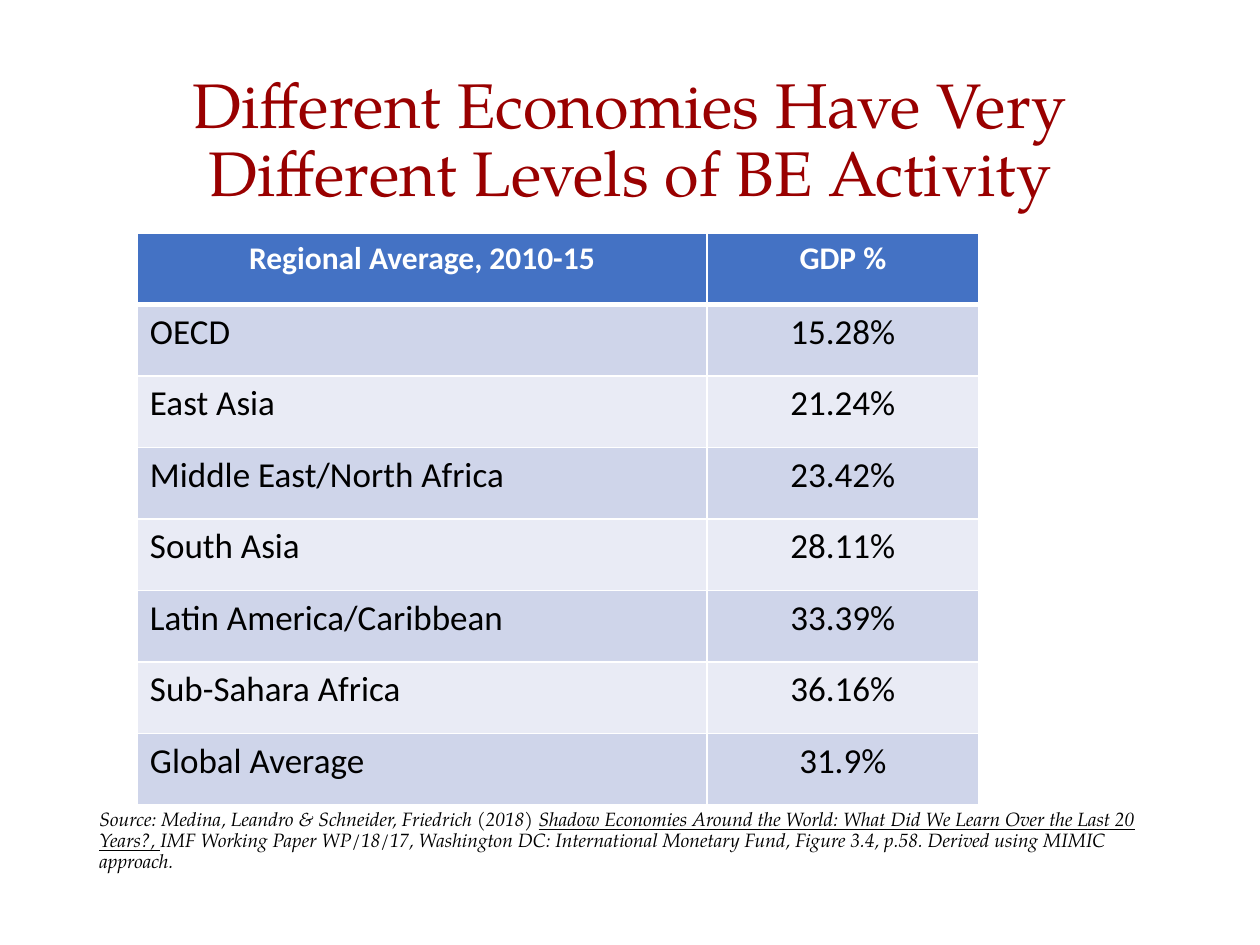
from dataclasses import dataclass

from lxml.etree import SubElement
from pptx import Presentation
from pptx.dml.color import RGBColor
from pptx.enum.text import MSO_ANCHOR, PP_ALIGN
from pptx.oxml.ns import qn
from pptx.util import Inches, Pt


@dataclass(frozen=True)
class Theme:
    """Fonts, type sizes and colours of the slide."""
    serif: str = "TeX Gyre Pagella"
    sans: str = "Calibri"
    title_size: int = 36
    header_size: int = 18
    body_size: int = 20
    source_size: int = 11
    title: str = "990000"
    text: str = "000000"
    white: str = "FFFFFF"
    header: str = "4472C4"
    bands: tuple = ("CFD5EA", "E9EBF5")


THEME = Theme()

ROWS = [
    ("Regional Average, 2010-15", "GDP %"),
    ("OECD", "15.28%"),
    ("East Asia", "21.24%"),
    ("Middle East/North Africa", "23.42%"),
    ("South Asia", "28.11%"),
    ("Latin America/Caribbean", "33.39%"),
    ("Sub-Sahara Africa", "36.16%"),
    ("Global Average", "31.9%"),
]

SOURCE = [
    ("Source: Medina, Leandro & Schneider, Friedrich (2018) ", False),
    ("Shadow Economies Around the World: What Did We Learn Over the Last 20 Years?, ", True),
    ("IMF Working Paper WP/18/17, Washington DC: International Monetary Fund, "
     "Figure 3.4, p.58. Derived using MIMIC approach.", False),
]


def set_font(para, name, size, color, bold=False, italic=False):
    """Set the font of a whole paragraph."""
    font = para.font
    font.name, font.size = name, Pt(size)
    font.bold, font.italic = bold, italic
    font.color.rgb = RGBColor.from_string(color)


def add_title(page, text):
    """Place and format the title placeholder."""
    title = page.shapes.title
    title.left, title.top = Inches(0.69), Inches(0.4)
    title.width, title.height = Inches(8.62), Inches(1.45)
    frame = title.text_frame
    frame.text = text
    frame.word_wrap = True
    frame.vertical_anchor = MSO_ANCHOR.MIDDLE
    para = frame.paragraphs[0]
    para.alignment, para.line_spacing = PP_ALIGN.CENTER, 0.9
    set_font(para, THEME.serif, THEME.title_size, THEME.title)


def set_borders(cell, widths):
    """Draw white borders, given a width in points for each side."""
    properties = cell._tc.get_or_add_tcPr()
    for side, width in widths.items():
        line = SubElement(properties, qn(f"a:ln{side}"), w=str(Pt(width)))
        fill = SubElement(line, qn("a:solidFill"))
        SubElement(fill, qn("a:srgbClr"), val=THEME.white)


def format_cell(cell, row, column):
    """Format one table cell by its row and column."""
    is_header = row == 0
    set_borders(cell, {"L": 1, "R": 1, "T": 3 if row == 1 else 1, "B": 3 if is_header else 1})
    color = THEME.header if is_header else THEME.bands[(row - 1) % 2]
    cell.fill.solid()
    cell.fill.fore_color.rgb = RGBColor.from_string(color)
    para = cell.text_frame.paragraphs[0]
    para.alignment = PP_ALIGN.CENTER if is_header or column else PP_ALIGN.LEFT
    if is_header:
        set_font(para, THEME.sans, THEME.header_size, THEME.white, bold=True)
    else:
        set_font(para, THEME.sans, THEME.body_size, THEME.text)


def add_region_table(page):
    """Add the table of regional averages."""
    table = page.shapes.add_table(
        len(ROWS), 2, Inches(1.09), Inches(1.85), Inches(6.68), Inches(4.54)).table
    for column, width in zip(table.columns, (4.52, 2.16)):
        column.width = Inches(width)
    for row, values in enumerate(ROWS):
        for column, value in enumerate(values):
            cell = table.cell(row, column)
            cell.text = value
            format_cell(cell, row, column)


def add_source(page):
    """Add the source note below the table."""
    box = page.shapes.add_textbox(Inches(0.69), Inches(6.38), Inches(8.62), Inches(0.65))
    box.text_frame.word_wrap = True
    para = box.text_frame.paragraphs[0]
    para.line_spacing = 0.9
    set_font(para, THEME.serif, THEME.source_size, THEME.text, italic=True)
    for text, underlined in SOURCE:
        span = para.add_run()
        span.text = text
        if underlined:
            span.font.underline = True


def main():
    """Build and save the deck."""
    deck = Presentation()
    deck.slide_width, deck.slide_height = Inches(10), Inches(7.5)
    page = deck.slides.add_slide(deck.slide_layouts[5])
    add_title(page, "Different Economies Have Very Different Levels of BE Activity")
    add_region_table(page)
    add_source(page)
    deck.save("out.pptx")


main()
